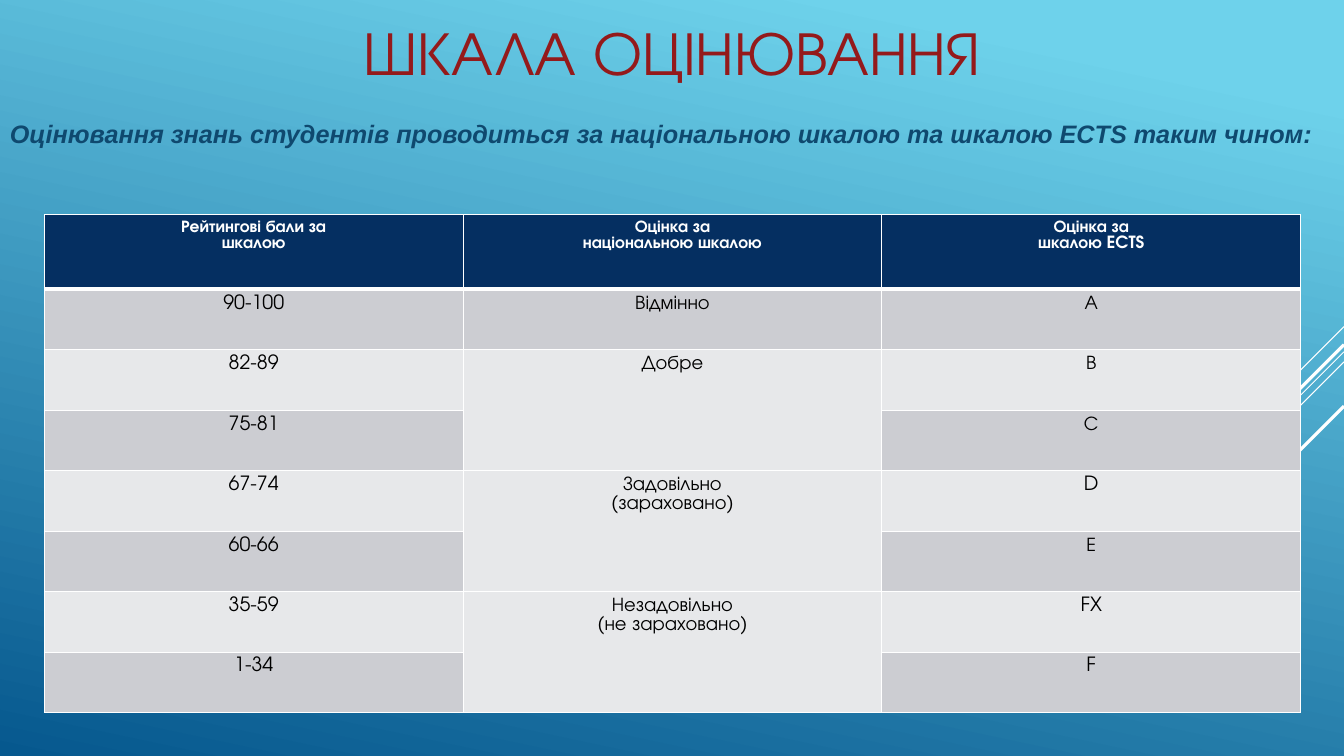
from lxml import etree
from pptx import Presentation
from pptx.dml.color import RGBColor
from pptx.enum.shapes import MSO_CONNECTOR
from pptx.enum.text import MSO_ANCHOR, PP_ALIGN
from pptx.oxml import parse_xml
from pptx.oxml.ns import nsdecls, qn
from pptx.util import Inches, Pt

STRAIGHT = MSO_CONNECTOR.STRAIGHT
CENTER, JUSTIFY = PP_ALIGN.CENTER, PP_ALIGN.JUSTIFY
MIDDLE, TOP = MSO_ANCHOR.MIDDLE, MSO_ANCHOR.TOP
WHITE, BLACK, NAVY = "FFFFFF", "000000", "052F61"
BANDS = ["CCCDD2", "E7E8EA"]
WIDTH, HEIGHT = 13.33, 7.5


def color(value):
    return RGBColor.from_string(value)


def write(frame, text, size, ink, font="TeX Gyre Adventor", bold=False,
          italic=False, align=CENTER, spacing=None):
    """Fill a text frame, one paragraph for each line of the text."""
    frame.word_wrap = True
    for index, line in enumerate(text.split("\n")):
        paragraph = frame.add_paragraph() if index else frame.paragraphs[0]
        paragraph.alignment = align
        paragraph.line_spacing = spacing
        run = paragraph.add_run()
        run.text = line
        run.font.size = Pt(size)
        run.font.name = font
        run.font.bold = bold
        run.font.italic = italic
        run.font.color.rgb = color(ink)


presentation = Presentation()
presentation.slide_width = Inches(WIDTH)
presentation.slide_height = Inches(HEIGHT)
slide = presentation.slides.add_slide(presentation.slide_layouts[6])

# Background gradient
background = slide.background.fill
background.gradient()
background.gradient_angle = 360 - 102
for stop, position, shade in zip(background.gradient_stops, [0.1, 1], ["6ED2EB", "06588E"]):
    stop.position = position
    stop.color.rgb = color(shade)

# Diagonal rays from the right edge: start height, run to the left, line width
rays = [(3.24, 1, 0.75), (3.49, 3.26, 0.75), (3.59, 2.07, 0.75),
        (3.42, 1.91, 2.25), (4.03, 1.39, 2.25)]
for start, reach, weight in rays:
    ray = slide.shapes.add_connector(
        STRAIGHT, Inches(WIDTH), Inches(start), Inches(WIDTH - reach), Inches(start + reach))
    ray.line.color.rgb = color(WHITE)
    ray.line.width = Pt(weight)
    etree.SubElement(ray._element.spPr, qn("a:effectLst"))

# Title and introduction
title = slide.shapes.add_textbox(0, 0, Inches(WIDTH), Inches(1))
title.text_frame.vertical_anchor = MIDDLE
write(title.text_frame, "ШКАЛА ОЦІНЮВАННЯ", 44, "941A1B")

introduction = slide.shapes.add_textbox(0, Inches(1.12), Inches(13.16), Inches(0.71))
write(introduction.text_frame,
      "Оцінювання знань студентів проводиться за національною шкалою та шкалою ECTS таким чином:",
      18, "0F496F", font="Arial", bold=True, italic=True, align=JUSTIFY)

# Grading table; None continues the cell above
grades = [
    ("Рейтингові бали за\nшкалою", "Оцінка за\nнаціональною шкалою", "Оцінка за\nшкалою ECTS"),
    ("90-100", "Відмінно", "А"),
    ("82-89", "Добре", "В"),
    ("75-81", None, "С"),
    ("67-74", "Задовільно\n(зараховано)", "D"),
    ("60-66", None, "Е"),
    ("35-59", "Незадовільно\n(не зараховано)", "FX"),
    ("1-34", None, "F"),
]
table_frame = slide.shapes.add_table(
    len(grades), 3, Inches(0.44), Inches(2.13), Inches(12.46), Inches(4.94))
table = table_frame.table
for row_index, grade in enumerate(grades):
    header = row_index == 0
    table.rows[row_index].height = Inches(0.74 if header else 0.6)
    for column_index, text in enumerate(grade):
        cell = table.cell(row_index, column_index)
        properties = cell._tc.get_or_add_tcPr()
        for side in "LRTB":
            thick = (row_index, side) in [(0, "B"), (1, "T")]
            properties.append(parse_xml(
                f'<a:ln{side} {nsdecls("a")} w="{Pt(3 if thick else 1)}"><a:solidFill>'
                f'<a:srgbClr val="{WHITE}"/></a:solidFill></a:ln{side}>'))
        cell.fill.solid()
        cell.fill.fore_color.rgb = color(NAVY if header else BANDS[(row_index - 1) % 2])
        cell.vertical_anchor = TOP
        if text is None:
            table.cell(row_index - 1, column_index).merge(cell)
        elif header:
            write(cell.text_frame, text, 12, WHITE, bold=True, spacing=Pt(11.4))
        else:
            write(cell.text_frame, text, 14, BLACK, spacing=Pt(13.2))

presentation.save("out.pptx")
